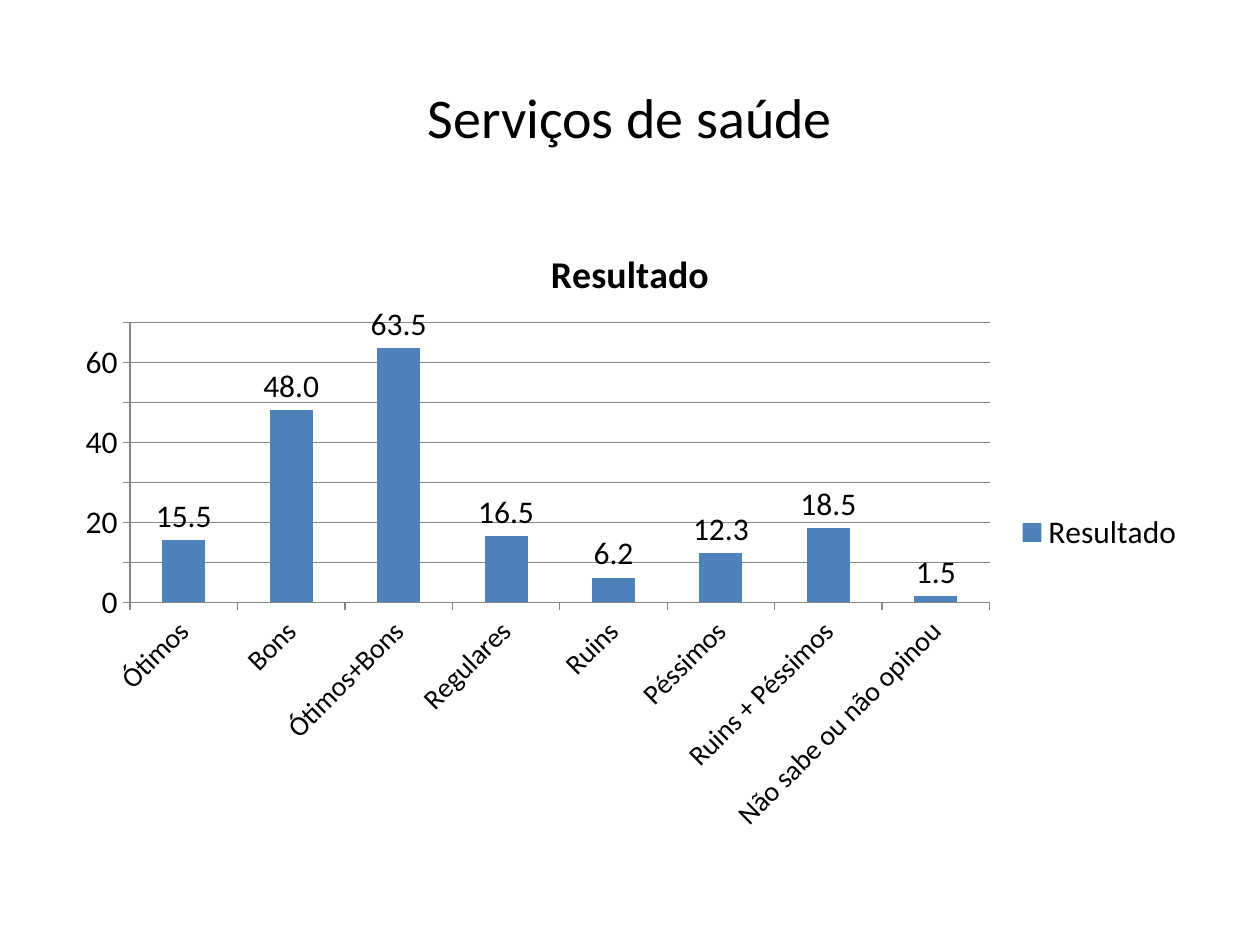
from dataclasses import dataclass

from pptx import Presentation
from pptx import util as u
from pptx.chart.data import CategoryChartData
from pptx.dml.color import RGBColor
from pptx.enum import chart as ch
from pptx.enum import text


@dataclass(frozen=True)
class Theme:
    font: str = "Calibri"
    ink: RGBColor = RGBColor(0x00, 0x00, 0x00)
    bar: RGBColor = RGBColor(0x4F, 0x81, 0xBD)
    grid: RGBColor = RGBColor(0x86, 0x86, 0x86)
    title_size: float = 32
    chart_title_size: float = 21.6
    chart_size: float = 18
    category_size: float = 16


RATINGS = {
    "Ótimos": 15.5,
    "Bons": 48,
    "Ótimos+Bons": 63.5,
    "Regulares": 16.5,
    "Ruins": 6.2,
    "Péssimos": 12.3,
    "Ruins + Péssimos": 18.5,
    "Não sabe ou não opinou": 1.5,
}


class SlideBuilder:
    def __init__(self, slide, theme):
        self.slide = slide
        self.theme = theme

    def style_font(self, font, size, bold=False):
        font.name = self.theme.font
        font.size = u.Pt(size)
        font.bold = bold
        font.color.rgb = self.theme.ink

    def style_line(self, line):
        line.color.rgb = self.theme.grid
        line.width = u.Pt(0.75)

    def add_title(self, wording, left, top, width, height):
        title = self.slide.shapes.title
        title.left, title.top = u.Cm(left), u.Cm(top)
        title.width, title.height = u.Cm(width), u.Cm(height)
        title.text_frame.text = wording
        title.text_frame.vertical_anchor = text.MSO_ANCHOR.MIDDLE
        paragraph = title.text_frame.paragraphs[0]
        paragraph.alignment = text.PP_ALIGN.CENTER
        self.style_font(paragraph.font, self.theme.title_size)

    def add_column_chart(self, name, values, left, top, width, height):
        theme = self.theme
        data = CategoryChartData(number_format="0.0")
        data.categories = list(values)
        data.add_series(name, list(values.values()))
        chart = self.slide.shapes.add_chart(
            ch.XL_CHART_TYPE.COLUMN_CLUSTERED,
            u.Cm(left), u.Cm(top), u.Cm(width), u.Cm(height), data,
        ).chart
        self.style_font(chart.font, theme.chart_size)

        # Chart title and legend
        chart.has_title = True
        chart.chart_title.include_in_layout = False
        chart.chart_title.text_frame.text = name
        paragraph = chart.chart_title.text_frame.paragraphs[0]
        self.style_font(paragraph.font, theme.chart_title_size, bold=True)
        chart.has_legend = True
        chart.legend.position = ch.XL_LEGEND_POSITION.RIGHT
        chart.legend.include_in_layout = False

        # Axes
        for axis in (chart.category_axis, chart.value_axis):
            axis.major_tick_mark = ch.XL_TICK_MARK.OUTSIDE
            self.style_line(axis.format.line)
        self.style_font(chart.category_axis.tick_labels.font, theme.category_size)
        value_axis = chart.value_axis
        value_axis.minimum_scale, value_axis.maximum_scale = 0, 70
        value_axis.major_unit = 10
        value_axis.tick_labels.number_format = "General"
        value_axis.tick_labels.number_format_is_linked = False
        value_axis.has_major_gridlines = True
        self.style_line(value_axis.major_gridlines.format.line)

        # Columns and their values
        plot = chart.plots[0]
        plot.gap_width = 150
        plot.vary_by_categories = False
        fill = plot.series[0].format.fill
        fill.solid()
        fill.fore_color.rgb = theme.bar
        plot.has_data_labels = True
        labels = plot.data_labels
        labels.show_value = True
        labels.number_format = "0.0"
        labels.number_format_is_linked = False
        labels.position = ch.XL_LABEL_POSITION.OUTSIDE_END
        self.style_font(labels.font, theme.chart_size)


def main():
    presentation = Presentation()
    presentation.slide_width = u.Cm(25.4)
    presentation.slide_height = u.Cm(19.05)
    # Layout 5 holds only a title
    slide = presentation.slides.add_slide(presentation.slide_layouts[5])
    builder = SlideBuilder(slide, Theme())
    builder.add_title("Serviços de saúde", 1.27, 0.76, 22.86, 3.18)
    builder.add_column_chart("Resultado", RATINGS, 1.27, 4.45, 22.86, 12.57)
    presentation.save("out.pptx")


if __name__ == "__main__":
    main()
